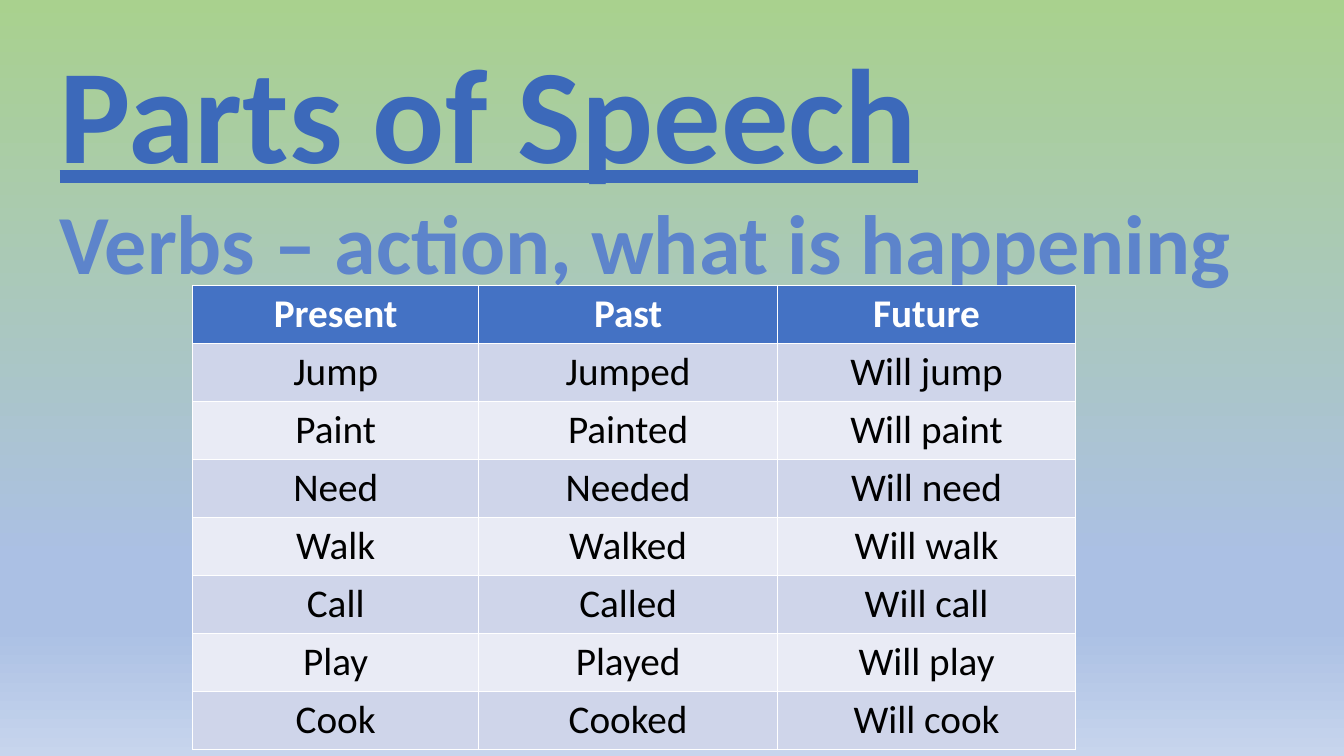
from lxml import etree
from pptx import Presentation, util as u
from pptx.dml.color import RGBColor
from pptx.enum import text
from pptx.oxml.ns import qn

WIDTH, HEIGHT = u.Inches(13.33), u.Inches(7.5)
FONT = "Calibri"
COLORS = {
    "title": "3C69BA", "subtitle": "5D84CB",
    "header": "4472C4", "header_text": "FFFFFF",
    "odd_row": "CFD5EA", "even_row": "E9EBF5", "body_text": "000000",
}
BACKGROUND_STOPS = [(0, "A9D18E"), (74, "ABC0E4"), (83, "ABC0E4"), (100, "C7D5ED")]
TENSES = [
    ("Present", "Past", "Future"),
    ("Jump", "Jumped", "Will jump"),
    ("Paint", "Painted", "Will paint"),
    ("Need", "Needed", "Will need"),
    ("Walk", "Walked", "Will walk"),
    ("Call", "Called", "Will call"),
    ("Play", "Played", "Will play"),
    ("Cook", "Cooked", "Will cook"),
]
COLUMN_WIDTHS = [2.84, 2.96, 2.96]


def inches(*lengths):
    return [u.Inches(length) for length in lengths]


def format_paragraph(para, size, color, bold, align):
    para.alignment = align
    font = para.font
    font.name, font.size, font.bold = FONT, u.Pt(size), bold
    font.color.rgb = RGBColor.from_string(COLORS[color])


def paint_background(page):
    """Fill the page from top to bottom through all the gradient stops."""
    fill = page.background.fill
    fill.gradient()
    fill.gradient_angle = 270
    stop_list = next(page.element.iter(qn("a:gsLst")))
    for stop in list(stop_list):
        stop_list.remove(stop)
    for percent, color in BACKGROUND_STOPS:
        stop = etree.SubElement(stop_list, qn("a:gs"), pos=str(percent * 1000))
        etree.SubElement(stop, qn("a:srgbClr"), val=color)


def place_heading(holder, box, wording, size, color):
    holder.left, holder.top, holder.width, holder.height = box
    frame = holder.text_frame
    frame.text = wording
    frame.word_wrap = True
    frame.auto_size = text.MSO_AUTO_SIZE.NONE
    frame.vertical_anchor = text.MSO_ANCHOR.TOP
    para = frame.paragraphs[0]
    para.space_before = u.Pt(0)
    format_paragraph(para, size, color, True, text.PP_ALIGN.LEFT)
    return para


def add_tense_table(page, box):
    table = page.shapes.add_table(len(TENSES), len(COLUMN_WIDTHS), *box).table
    for column, share in zip(table.columns, COLUMN_WIDTHS):
        column.width = int(box[2] * share / sum(COLUMN_WIDTHS))
    for index, words in enumerate(TENSES):
        header = index == 0
        fill = "header" if header else "odd_row" if index % 2 else "even_row"
        for cell, word in zip(table.rows[index].cells, words):
            cell.text = word
            cell.fill.solid()
            cell.fill.fore_color.rgb = RGBColor.from_string(COLORS[fill])
            format_paragraph(cell.text_frame.paragraphs[0], 28,
                             "header_text" if header else "body_text",
                             header, text.PP_ALIGN.CENTER)


def build_verbs_slide(deck):
    page = deck.slides.add_slide(deck.slide_layouts[0])
    paint_background(page)
    title = place_heading(page.shapes.title, inches(0.49, 0.24, 12.03, 1.72),
                          "Parts of Speech", 96, "title")
    title.font.underline = True
    place_heading(page.placeholders[1], inches(0.49, 1.84, 12.03, 1.31),
                  "Verbs – action, what is happening", 60, "subtitle")
    add_tense_table(page, inches(1.91, 2.83, 8.76, 4.53))


def main():
    deck = Presentation()
    deck.slide_width, deck.slide_height = WIDTH, HEIGHT
    build_verbs_slide(deck)
    deck.save("out.pptx")


if __name__ == "__main__":
    main()
